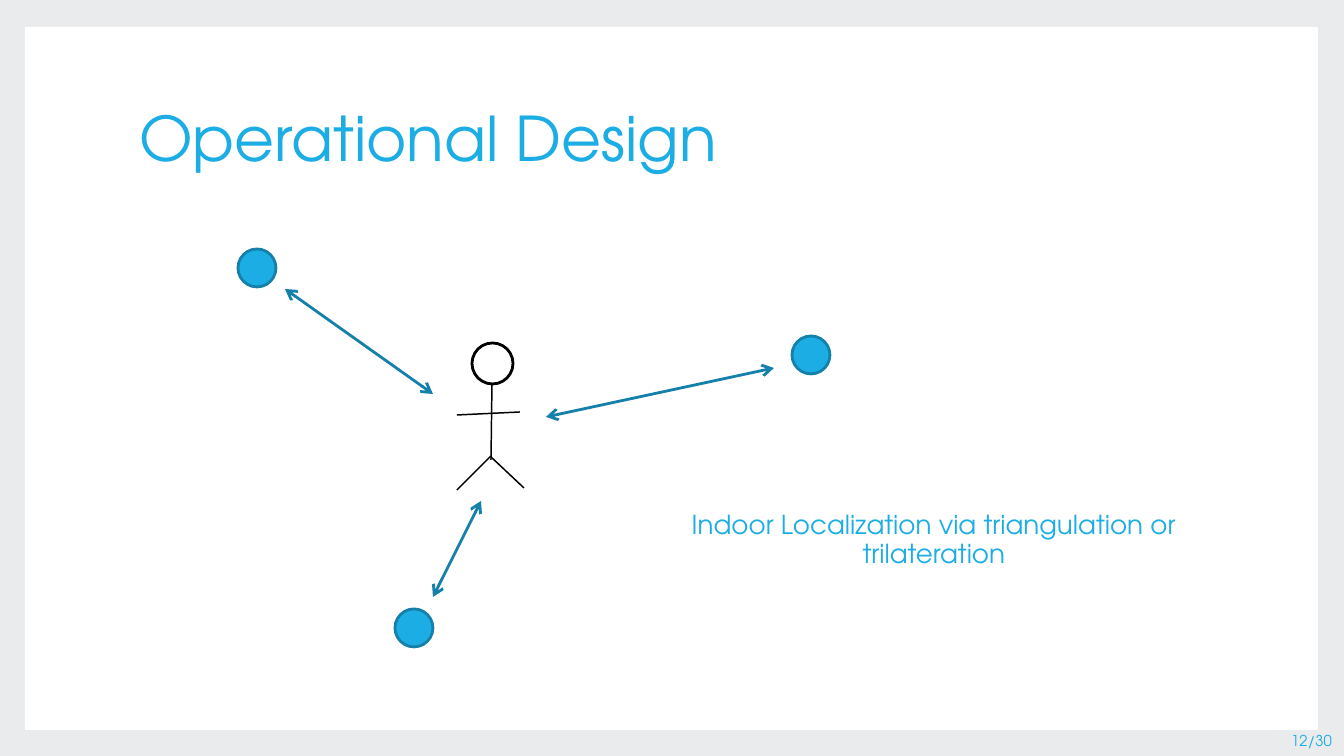
from dataclasses import dataclass
from typing import NamedTuple

from lxml.etree import SubElement
from pptx import Presentation
from pptx.dml.color import RGBColor
from pptx.enum.shapes import MSO_CONNECTOR as Connector, MSO_SHAPE as Shape
from pptx.enum.text import MSO_ANCHOR as Anchor, PP_ALIGN as Align
from pptx.oxml.ns import qn
from pptx.util import Emu, Pt

EMU_PER_PX = 914400 / 134.4


@dataclass(frozen=True)
class Theme:
    """Colours, font and sizes of the slide."""
    frame: str = "E9EBED"
    paper: str = "FFFFFF"
    accent: str = "1CADE4"
    accent_dark: str = "1580A9"
    ink: str = "000000"
    font: str = "TeX Gyre Adventor"
    title_size: int = 33
    caption_size: int = 14
    number_size: int = 8
    bold_line: float = 1.5
    thin_line: float = 0.79


class Box(NamedTuple):
    """A rectangle in px."""
    left: int
    top: int
    width: int
    height: int


THEME = Theme()


def px(length):
    """Turn px into EMU."""
    return Emu(round(length * EMU_PER_PX))


def color(value):
    """Turn a hex string into a colour."""
    return RGBColor.from_string(value)


def add_block(page, kind, box, fill, line=None):
    """Draw a filled preset shape, outlined if a line colour is given."""
    block = page.shapes.add_shape(kind, *map(px, box))
    block.shadow.inherit = False
    block.fill.solid()
    block.fill.fore_color.rgb = color(fill)
    if line:
        block.line.color.rgb = color(line)
        block.line.width = Pt(THEME.bold_line)
    else:
        block.line.fill.background()


def add_line(page, box, ends, line, width, arrows=False):
    """Draw a straight line between two points inside a box."""
    x1, y1, x2, y2 = ends
    points = (box.left + x1, box.top + y1, box.left + x2, box.top + y2)
    link = page.shapes.add_connector(Connector.STRAIGHT, *map(px, points))
    link.line.color.rgb = color(line)
    link.line.width = Pt(width)
    if arrows:
        outline = link.line._get_or_add_ln()
        for end in ("a:headEnd", "a:tailEnd"):
            SubElement(outline, qn(end), type="arrow")
    SubElement(link.element.spPr, qn("a:effectLst"))


def write(holder, text, *, size, align=Align.LEFT, anchor=Anchor.MIDDLE, spacing=None):
    """Put one formatted paragraph into a text holder."""
    frame = holder.text_frame
    frame.word_wrap = True
    frame.vertical_anchor = anchor
    frame.margin_left = frame.margin_right = px(13)
    frame.margin_top = frame.margin_bottom = px(7)
    para = frame.paragraphs[0]
    para.alignment = align
    para.line_spacing = spacing
    span = para.add_run()
    span.text = text
    span.font.name = THEME.font
    span.font.size = Pt(size)
    span.font.color.rgb = color(THEME.accent)


def add_text(page, box, text, **style):
    """Add a text box with one formatted paragraph."""
    write(page.shapes.add_textbox(*map(px, box)), text, **style)


def add_title(page, box, text):
    """Place and fill the title placeholder, in front of the panel."""
    title = page.shapes.title
    title.left, title.top, title.width, title.height = map(px, box)
    write(title, text, size=THEME.title_size, spacing=0.9)
    title.element.getparent().append(title.element)


def add_person(page, box):
    """Draw a stick figure."""
    head = Box(box.left + 15, box.top, 41, 41)
    add_block(page, Shape.OVAL, head, THEME.paper, THEME.ink)
    spine, arms = (35, 40, 34, 117), (0, 72, 63, 69)
    legs = (34, 114, 67, 145), (34, 113, 0, 147)
    for limb in (spine, arms, *legs):
        add_line(page, box, limb, THEME.ink, THEME.thin_line)


def add_diagram(page, box):
    """Draw a person who exchanges signals with three beacons."""
    for x, y in ((0, 0), (554, 87), (157, 360)):
        beacon = Box(box.left + x, box.top + y, 38, 38)
        add_block(page, Shape.OVAL, beacon, THEME.accent, THEME.accent_dark)
    add_person(page, Box(box.left + 219, box.top + 94, 67, 147))
    signals = (308, 168, 536, 119), (195, 348, 243, 252), (47, 40, 195, 145)
    for signal in signals:
        add_line(page, box, signal, THEME.accent_dark, THEME.bold_line, arrows=True)


def main():
    """Build and save the slide."""
    deck = Presentation()
    deck.slide_width, deck.slide_height = px(1344), px(756)
    page = deck.slides.add_slide(deck.slide_layouts[5])
    page.background.fill.solid()
    page.background.fill.fore_color.rgb = color(THEME.frame)
    add_block(page, Shape.RECTANGLE, Box(25, 27, 1293, 703), THEME.paper)
    add_text(page, Box(1252, 724, 93, 32), "12/30", size=THEME.number_size,
             align=Align.RIGHT, anchor=Anchor.BOTTOM)
    add_title(page, Box(126, 67, 1089, 149), "Operational Design")
    add_diagram(page, Box(238, 249, 592, 398))
    add_text(page, Box(657, 466, 554, 149),
             "Indoor Localization via triangulation or trilateration",
             size=THEME.caption_size, align=Align.CENTER, spacing=0.9)
    deck.save("out.pptx")


if __name__ == "__main__":
    main()
